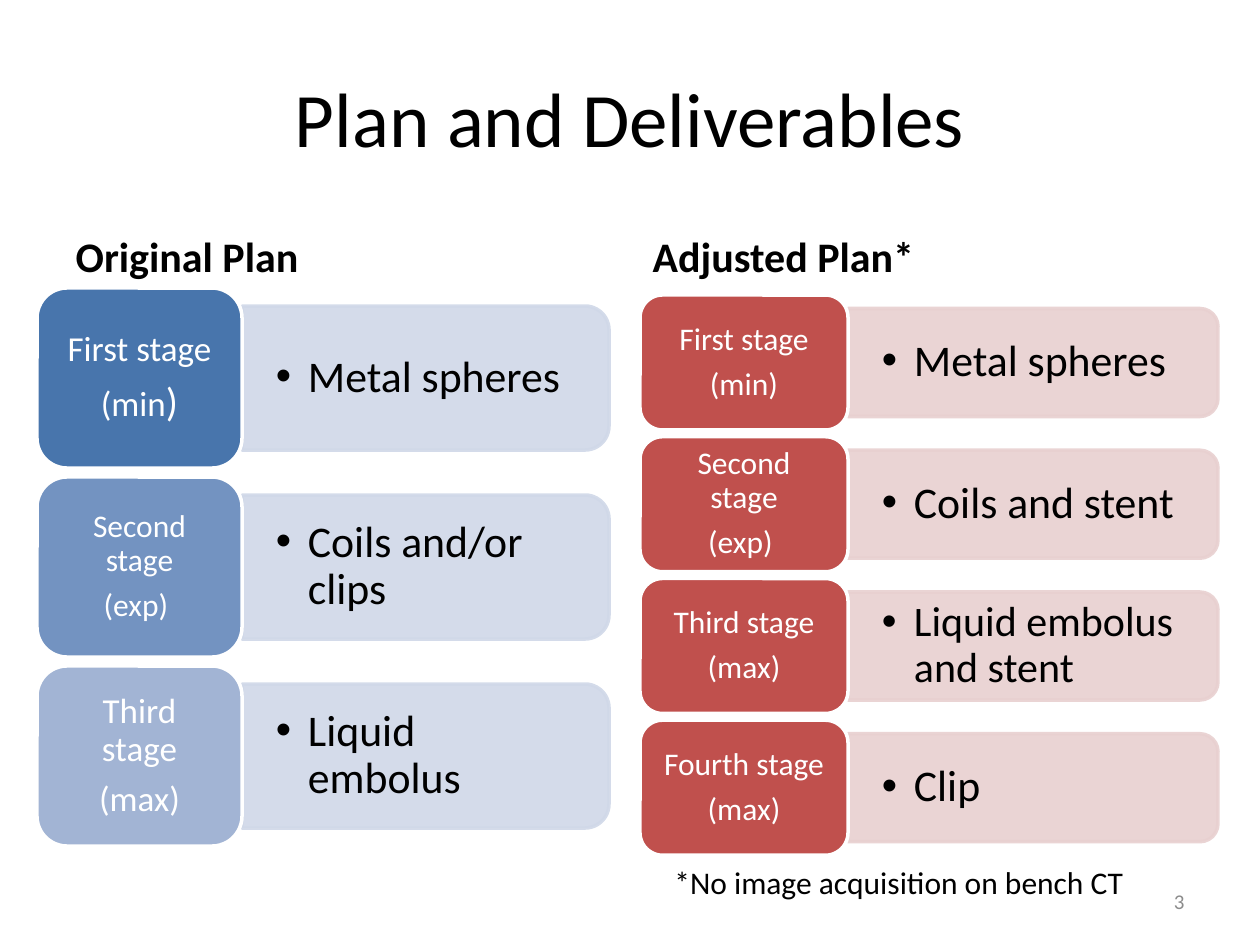
import pptx
import pptx.util
import pptx.dml.color
import pptx.enum.shapes
import pptx.enum.text
import pptx.oxml
import pptx.oxml.ns
from dataclasses import dataclass

TITLE = "Plan and Deliverables"
FOOTNOTE = "*No image acquisition on bench CT"
PAGE_NUMBER = "3"

PLANS = [
    {
        "heading": "Original Plan", "heading_x": 63, "x": 37, "top": 288,
        "tile": (205, 180), "panel_width": 367, "text_width": 359,
        "panel_fill": "D0D8E8",
        "stages": [
            ("4875AC", 20, ["First stage", [("(min", 20), (")", 23)]], "Metal spheres", 25),
            ("7393C1", 18, ["Second stage", "(exp) "], "Coils and/or clips", 25),
            ("A2B4D4", 20, ["Third stage", "(max)"], "Liquid embolus", 25),
        ],
    },
    {
        "heading": "Adjusted Plan*", "heading_x": 640, "x": 640, "top": 295,
        "tile": (208, 135), "panel_width": 370, "text_width": 364,
        "panel_fill": "E8D0D0",
        "stages": [
            ("C0504D", 18, ["First stage", "(min)"], "Metal spheres", 25),
            ("C0504D", 18, ["Second stage", "(exp) "], "Coils and stent", 25),
            ("C0504D", 18, ["Third stage", "(max)"], "Liquid embolus and stent", 24),
            ("C0504D", 18, ["Fourth stage", "(max)"], "Clip", 25),
        ],
    },
]


@dataclass(frozen=True)
class Theme:
    font: str = "Calibri"
    ink: str = "000000"
    paper: str = "FFFFFF"
    muted: str = "8C8C8C"
    title: int = 44
    heading: int = 24
    note: int = 18
    page: int = 12
    line: int = 2
    panel_alpha: int = 90


THEME = Theme()
PX = 914400 / 126
GAP_RATIO = 0.05
PANEL_RATIO = 0.8
SHAPES = pptx.enum.shapes.MSO_SHAPE
ALIGN = pptx.enum.text.PP_ALIGN
ANCHOR = pptx.enum.text.MSO_ANCHOR


def px(length):
    return pptx.util.Emu(round(length * PX))


def box(x, y, width, height):
    return px(x), px(y), px(width), px(height)


def rgb(value):
    return pptx.dml.color.RGBColor.from_string(value)


def add_bullet(paragraph, indent):
    properties = paragraph._p.get_or_add_pPr()
    properties.set("marL", str(px(indent)))
    properties.set("indent", str(-px(indent)))
    for tag, attribute, value in (("a:buFont", "typeface", "Arial"), ("a:buChar", "char", "•")):
        element = pptx.oxml.parse_xml(f'<{tag} {pptx.oxml.ns.nsdecls("a")} {attribute}="{value}"/>')
        properties.append(element)


def write(shape, paragraphs, *, size, color=THEME.ink, bold=False, align=ALIGN.LEFT,
          anchor=ANCHOR.MIDDLE, insets=None, spacing=None, after=0, bullet=False):
    frame = shape.text_frame
    frame.word_wrap = True
    frame.auto_size = pptx.enum.text.MSO_AUTO_SIZE.NONE
    frame.vertical_anchor = anchor
    if insets:
        frame.margin_left = frame.margin_right = px(insets[0])
        frame.margin_top = frame.margin_bottom = px(insets[1])
    for number, content in enumerate(paragraphs):
        paragraph = frame.add_paragraph() if number else frame.paragraphs[0]
        paragraph.alignment = align
        paragraph.space_before = pptx.util.Pt(0)
        paragraph.space_after = pptx.util.Pt(after)
        if spacing:
            paragraph.line_spacing = spacing
        if bullet:
            add_bullet(paragraph, 32)
        runs = [(content, size)] if isinstance(content, str) else content
        for text, run_size in runs:
            run = paragraph.add_run()
            run.text = text
            run.font.name = THEME.font
            run.font.size = pptx.util.Pt(run_size)
            run.font.bold = bold
            run.font.color.rgb = rgb(color)


def place(placeholder, x, y, width, height):
    placeholder.left, placeholder.top, placeholder.width, placeholder.height = box(x, y, width, height)
    return placeholder


def add_block(slide, preset, bounds, fill, line, alpha=None):
    block = slide.shapes.add_shape(preset, *box(*bounds))
    block.shadow.inherit = False
    block.fill.solid()
    block.fill.fore_color.rgb = rgb(fill)
    block.line.color.rgb = rgb(line)
    block.line.width = pptx.util.Pt(THEME.line)
    if alpha:
        for color in block._element.spPr.iter(pptx.oxml.ns.qn("a:srgbClr")):
            color.append(pptx.oxml.parse_xml(
                f'<a:alpha {pptx.oxml.ns.nsdecls("a")} val="{alpha * 1000}"/>'))
    return block


def add_plan(slide, plan):
    tile_width, tile_height = plan["tile"]
    panel_width, panel_height = plan["panel_width"], tile_height * PANEL_RATIO
    panel_x = plan["x"] + tile_width
    for row, (fill, label_size, label, deliverable, size) in enumerate(plan["stages"]):
        top = plan["top"] + row * tile_height * (1 + GAP_RATIO)
        middle = top + tile_height / 2
        upright = (panel_x + (panel_width - panel_height) / 2, middle - panel_width / 2,
                   panel_height, panel_width)
        panel = add_block(slide, SHAPES.ROUND_2_SAME_RECTANGLE, upright,
                          plan["panel_fill"], plan["panel_fill"], THEME.panel_alpha)
        panel.rotation = 90
        item = slide.shapes.add_textbox(
            *box(panel_x, middle - panel_height / 2, plan["text_width"], panel_height))
        write(item, [deliverable], size=size, insets=(34, 18), spacing=0.9, bullet=True)
        tile = add_block(slide, SHAPES.ROUNDED_RECTANGLE,
                         (plan["x"], top, tile_width, tile_height), fill, THEME.paper)
        write(tile, label, size=label_size, color=THEME.paper, align=ALIGN.CENTER,
              insets=(17, 12), spacing=0.9, after=label_size * 0.35)


def main():
    deck = pptx.Presentation()
    deck.slide_width, deck.slide_height = px(1260), px(945)
    slide = deck.slides.add_slide(deck.slide_layouts.get_by_name("Comparison"))
    parts = {part.placeholder_format.idx: part for part in slide.placeholders}
    for unused in (2, 4):
        parts[unused]._element.getparent().remove(parts[unused]._element)

    write(place(parts[0], 63, 38, 1134, 157), [TITLE], size=THEME.title, align=ALIGN.CENTER)
    for heading, plan in zip((parts[1], parts[3]), PLANS):
        write(place(heading, plan["heading_x"], 199, 557, 88), [plan["heading"]],
              size=THEME.heading, bold=True, anchor=ANCHOR.BOTTOM)
    page = slide.shapes.add_textbox(*box(1147, 876, 50, 50))
    write(page, [PAGE_NUMBER], size=THEME.page, color=THEME.muted, align=ALIGN.RIGHT)
    for plan in PLANS:
        add_plan(slide, plan)
    footnote = slide.shapes.add_textbox(*box(662, 840, 557, 67))
    write(footnote, [FOOTNOTE], size=THEME.note, anchor=ANCHOR.BOTTOM)
    deck.save("out.pptx")


if __name__ == "__main__":
    main()
